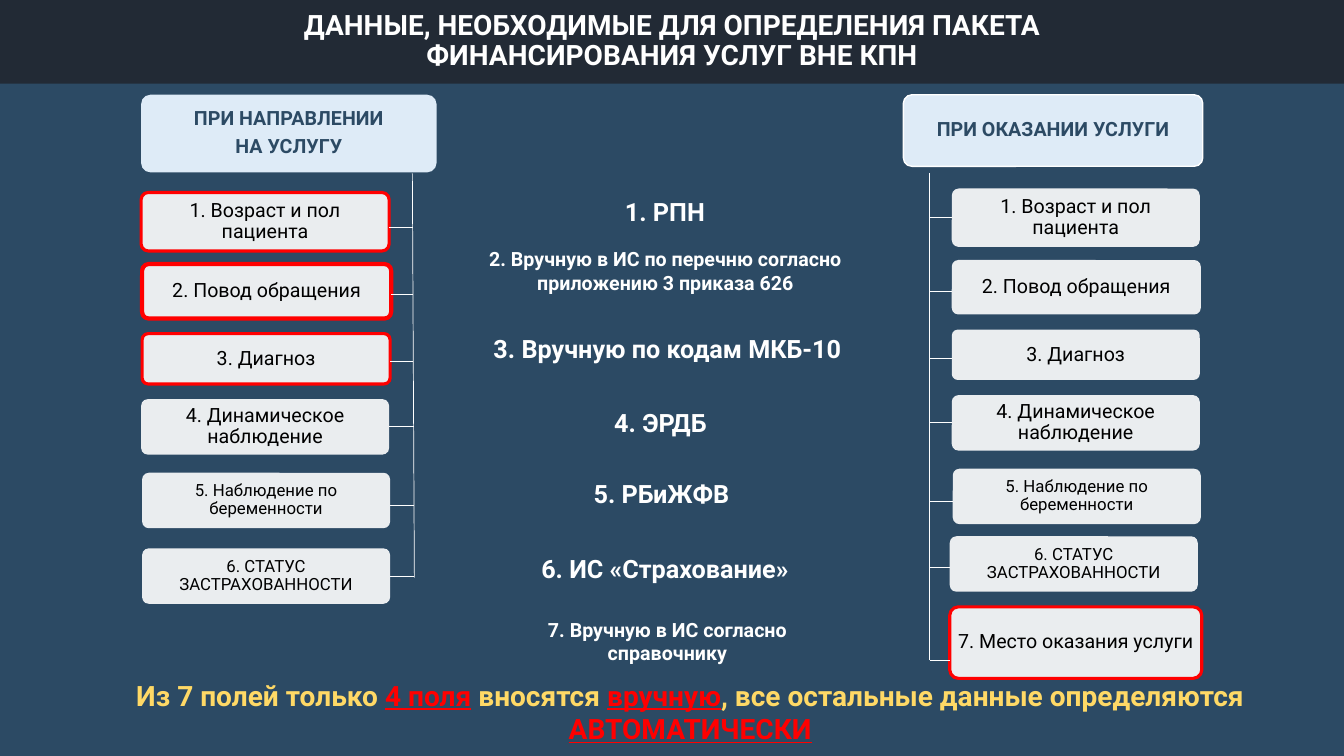
"""Builds the slide on the data that set the funding package for services."""
import pptx
import pptx.util
import pptx.dml.color
import pptx.enum.shapes
import pptx.enum.text
import lxml.etree

Inches, Pt = pptx.util.Inches, pptx.util.Pt
SHAPE = pptx.enum.shapes.MSO_SHAPE
STRAIGHT = pptx.enum.shapes.MSO_CONNECTOR.STRAIGHT
MIDDLE = pptx.enum.text.MSO_ANCHOR.MIDDLE
CENTER = pptx.enum.text.PP_ALIGN.CENTER
FIT = pptx.enum.text.MSO_AUTO_SIZE.SHAPE_TO_FIT_TEXT

THEME = {
    "font": "Roboto", "page": "2C4A64", "band": "222A35", "head": "DEEBF7",
    "white": "FFFFFF", "black": "000000", "red": "FF0000", "gold": "FFD966",
    "title": 20, "large": 18, "body": 14, "small": 12,
    "thin": 0.5, "rim": 1, "bold": 2.25, "heavy": 3,
}

TITLE = ["ДАННЫЕ, НЕОБХОДИМЫЕ ДЛЯ ОПРЕДЕЛЕНИЯ ПАКЕТА",
         "ФИНАНСИРОВАНИЯ УСЛУГ ВНЕ КПН"]
FIELDS = [
    ("1. Возраст и пол пациента", "body"),
    ("2. Повод обращения", "body"),
    ("3. Диагноз", "body"),
    ("4. Динамическое наблюдение", "body"),
    ("5. Наблюдение по беременности", "small"),
    ("6. СТАТУС ЗАСТРАХОВАННОСТИ", "small"),
    ("7. Место оказания услуги", "body"),
]
SIDES = [
    {"head": (["ПРИ НАПРАВЛЕНИИ", "НА УСЛУГУ"], (1.4, 0.94, 2.93, 0.77), None),
     "trunk": (4.09, 1.72, 4.11, 5.73), "site": 3,
     "boxes": [((1.4, 1.91, 2.46, 0.58), "bold", 2.26),
               ((1.41, 2.62, 2.47, 0.54), "heavy", 2.92),
               ((1.41, 3.31, 2.46, 0.5), "bold", 3.59),
               ((1.4, 3.96, 2.46, 0.55), None, 4.22),
               ((1.41, 4.69, 2.46, 0.55), None, 5.01),
               ((1.41, 5.44, 2.46, 0.55), None, 5.73)]},
    {"head": (["ПРИ ОКАЗАНИИ УСЛУГИ"], (8.96, 0.94, 2.97, 0.71), "rim"),
     "trunk": (9.22, 1.72, 9.22, 6.55), "site": 1,
     "boxes": [((9.44, 1.87, 2.46, 0.58), None, 2.16),
               ((9.44, 2.58, 2.47, 0.54), None, 2.89),
               ((9.44, 3.27, 2.46, 0.5), None, 3.56),
               ((9.44, 3.92, 2.46, 0.55), None, 4.19),
               ((9.45, 4.65, 2.46, 0.55), None, 4.97),
               ((9.42, 5.32, 2.46, 0.55), None, 5.63),
               ((9.42, 6.02, 2.5, 0.71), "bold", 6.55)]},
]
NOTES = [
    ("1. РПН", (6.06, 1.9, 1.07, 0.4), "large"),
    ("2. Вручную в ИС по перечню согласно приложению 3 приказа 626",
     (4.7, 2.4, 3.8, 0.81), "body"),
    ("3. Вручную по кодам МКБ-10", (4.59, 3.26, 4.06, 0.4), "large"),
    ("4. ЭРДБ", (5.94, 3.99, 1.22, 0.4), "large"),
    ("5. РБиЖФВ", (5.72, 4.7, 1.68, 0.4), "large"),
    ("6. ИС «Страхование»", (5.22, 5.44, 2.75, 0.4), "large"),
    ("7. Вручную в ИС согласно справочнику", (4.72, 6.08, 3.8, 0.57), "body"),
]
CLOSE = [("Из 7 полей только ", "gold"), ("4 поля", "red"), (" вносятся ", "gold"),
         ("вручную", "red"), (", все остальные данные определяются ", "gold"),
         ("АВТОМАТИЧЕСКИ", "red")]


def tint(name):
    return pptx.dml.color.RGBColor.from_string(THEME[name])


def apply(item, form):
    for key, value in form.items():
        setattr(item, key, value)


def write(shape, lines, size, form, bold=True, para=None):
    """Fill a shape with lines, each a list of (text, colour) runs."""
    frame = shape.text_frame
    apply(frame, form)
    for i, runs in enumerate(lines):
        row = frame.add_paragraph() if i else frame.paragraphs[0]
        apply(row, {"alignment": CENTER, **(para or {})})
        for text, hue in runs:
            run = row.add_run()
            run.text = text
            apply(run.font, {"name": THEME["font"], "size": Pt(THEME[size]),
                             "bold": bold, "underline": hue == "red"})
            run.font.color.rgb = tint(hue)


def block(slide, kind, place, fill, edge=None, width=None):
    shape = slide.shapes.add_shape(kind, *map(Inches, place))
    shape.shadow.inherit = False
    shape.fill.solid()
    shape.fill.fore_color.rgb = tint(fill)
    if width:
        shape.line.color.rgb = tint(edge)
        shape.line.width = Pt(THEME[width])
    else:
        shape.line.fill.background()
    return shape


def card(slide, place, lines, size, fill, hue, edge, width, bold):
    shape = block(slide, SHAPE.ROUNDED_RECTANGLE, place, fill, edge, width)
    shape.adjustments[0] = 0.12
    pad = {"margin_left": Inches(0.05), "margin_right": Inches(0.05),
           "margin_top": Inches(0.04), "margin_bottom": Inches(0.04)}
    write(shape, [[(line, hue)] for line in lines], size,
          {"word_wrap": True, "vertical_anchor": MIDDLE, **pad}, bold,
          {"line_spacing": 0.9, "space_after": Pt(0.35 * THEME[size])})
    return shape


def fade(shape):
    """Make a solid fill ninety percent opaque."""
    space = "{http://schemas.openxmlformats.org/drawingml/2006/main}"
    color = shape._element.spPr.find(f"{space}solidFill/{space}srgbClr")
    lxml.etree.SubElement(color, space + "alpha").set("val", "90000")


def wire(slide, *ends):
    line = slide.shapes.add_connector(STRAIGHT, *map(Inches, ends))
    line.line.color.rgb = tint("white")
    line.line.width = Pt(THEME["thin"])
    space = "{http://schemas.openxmlformats.org/drawingml/2006/main}"
    lxml.etree.SubElement(line._element.spPr, space + "effectLst")
    return line


def label(slide, place, lines, size, form, para=None):
    shape = slide.shapes.add_textbox(*map(Inches, place))
    write(shape, lines, size, form, para=para)


def column(slide, side):
    lines, place, width = side["head"]
    card(slide, place, lines, "body", "head", "page", "white", width, True)
    x1, top, x2, base = side["trunk"]
    wire(slide, x1, top, x2, base)
    for (text, size), (place, width, y) in zip(FIELDS, side["boxes"]):
        box = card(slide, place, [text], size, "white", "black", "red", width, False)
        fade(box)
        left, high, wide, tall = place
        edge = left + wide if side["site"] == 3 else left
        mid = high + tall / 2
        joined = abs(y - mid) < 0.02
        y = mid if joined else y
        stem = x1 + (x2 - x1) * (y - top) / (base - top)
        tick = wire(slide, stem, y, edge, y)
        if joined:
            tick.end_connect(box, side["site"])


def main():
    deck = pptx.Presentation()
    apply(deck, {"slide_width": Inches(13.33), "slide_height": Inches(7.5)})
    slide = deck.slides.add_slide(deck.slide_layouts[6])
    block(slide, SHAPE.RECTANGLE, (0, 0.73, 13.33, 6.77), "page")
    block(slide, SHAPE.RECTANGLE, (0, -0.01, 13.33, 0.84), "band")
    label(slide, (0.45, 0.1, 12.43, 0.63), [[(line, "white")] for line in TITLE],
          "title", {"word_wrap": True, "vertical_anchor": MIDDLE},
          {"line_spacing": 0.9})
    for side in SIDES:
        column(slide, side)
    for text, place, size in NOTES:
        label(slide, place, [[(text, "white")]], size,
              {"word_wrap": size == "body", "auto_size": FIT})
    label(slide, (0.57, 6.68, 12.55, 0.77), [CLOSE], "title",
          {"word_wrap": True, "auto_size": FIT})
    deck.save("out.pptx")


if __name__ == "__main__":
    main()
